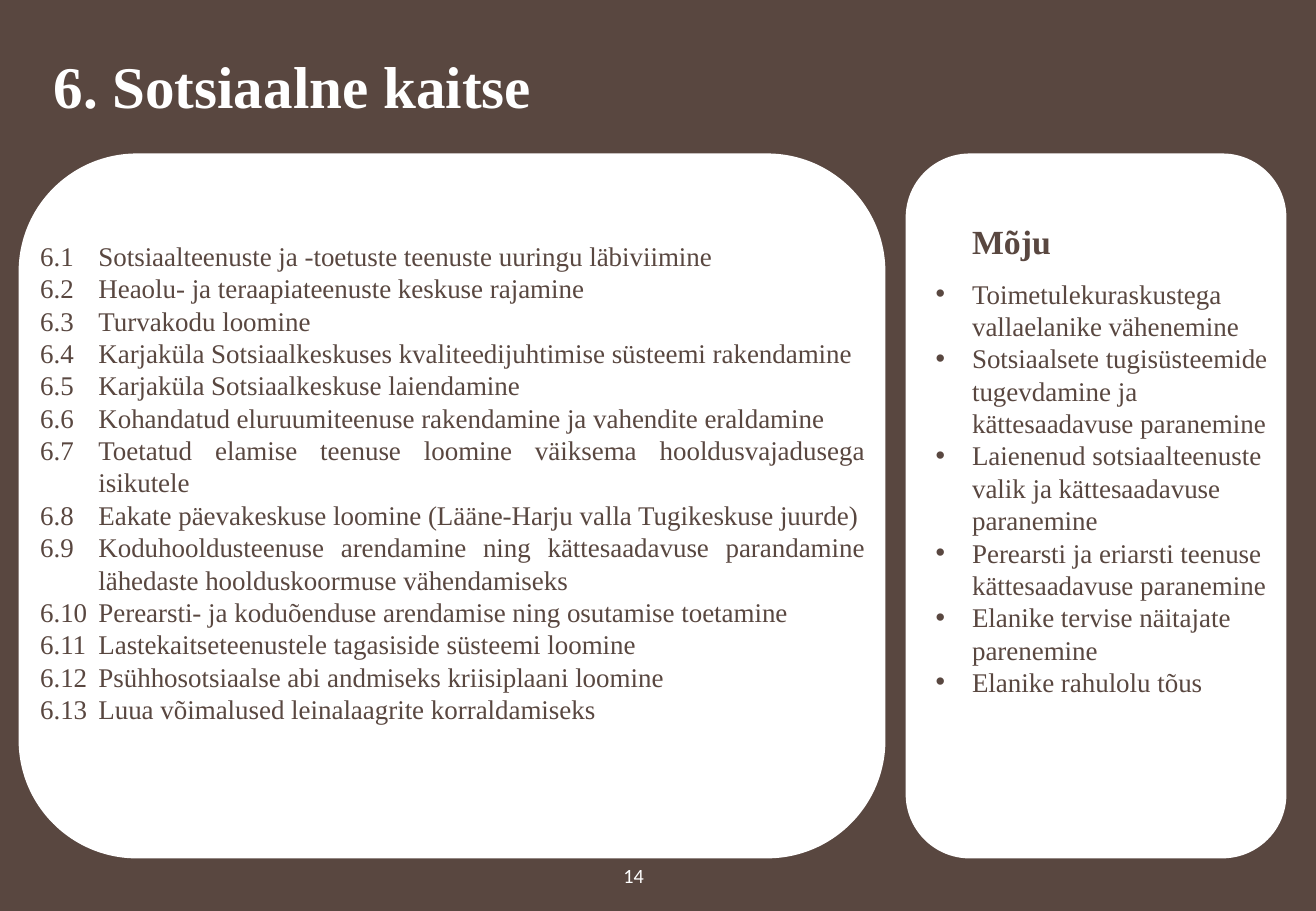
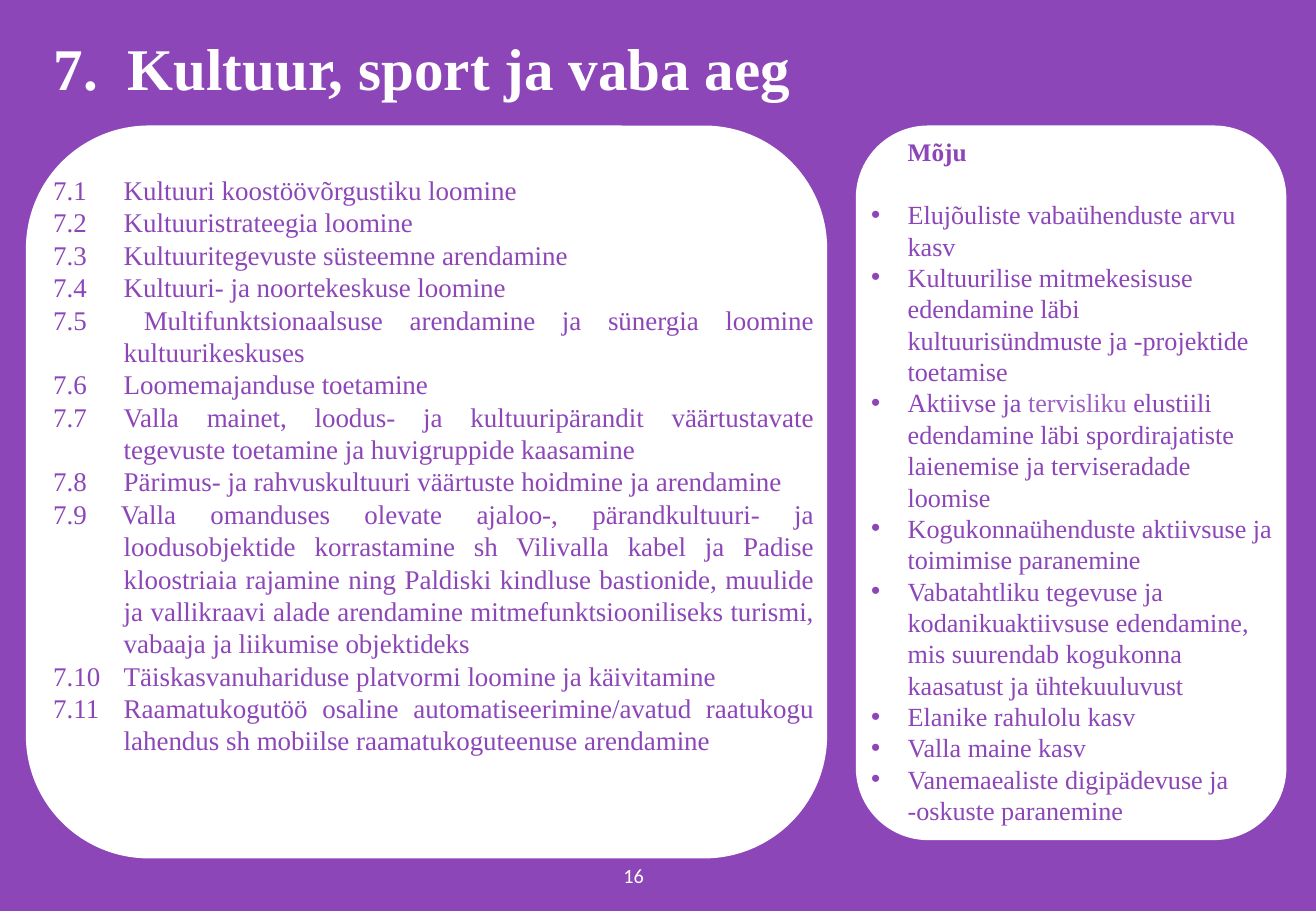
import pptx
import pptx.dml.color
import pptx.enum.shapes
import pptx.enum.text
import pptx.oxml.ns
import pptx.util
from lxml import etree

Inches = pptx.util.Inches
Pt = pptx.util.Pt
Align = pptx.enum.text.PP_ALIGN
Anchor = pptx.enum.text.MSO_ANCHOR

BROWN = pptx.dml.color.RGBColor(0x59, 0x47, 0x40)
PURPLE = pptx.dml.color.RGBColor(0x8D, 0x46, 0xB8)
LIGHT_PURPLE = pptx.dml.color.RGBColor(0x9E, 0x61, 0xC3)
WHITE = pptx.dml.color.RGBColor(0xFF, 0xFF, 0xFF)

SOCIAL_ACTIONS = [
    "6.1\tSotsiaalteenuste ja -toetuste teenuste uuringu läbiviimine",
    "6.2\tHeaolu- ja teraapiateenuste keskuse rajamine",
    "6.3\tTurvakodu loomine",
    "6.4\tKarjaküla Sotsiaalkeskuses kvaliteedijuhtimise süsteemi rakendamine",
    "6.5\tKarjaküla Sotsiaalkeskuse laiendamine",
    "6.6\tKohandatud eluruumiteenuse rakendamine ja vahendite eraldamine",
    "6.7\tToetatud elamise teenuse loomine väiksema hooldusvajadusega isikutele",
    "6.8\tEakate päevakeskuse loomine (Lääne-Harju valla Tugikeskuse juurde)",
    "6.9\tKoduhooldusteenuse arendamine ning kättesaadavuse parandamine "
    "lähedaste hoolduskoormuse vähendamiseks",
    "6.10\tPerearsti- ja koduõenduse arendamise ning osutamise toetamine",
    "6.11\tLastekaitseteenustele tagasiside süsteemi loomine",
    "6.12\tPsühhosotsiaalse abi andmiseks kriisiplaani loomine",
    "6.13\tLuua võimalused leinalaagrite korraldamiseks",
]
SOCIAL_IMPACT = [
    "Toimetulekuraskustega vallaelanike vähenemine",
    "Sotsiaalsete tugisüsteemide tugevdamine ja kättesaadavuse paranemine",
    "Laienenud sotsiaalteenuste valik ja kättesaadavuse paranemine",
    "Perearsti ja eriarsti teenuse kättesaadavuse paranemine",
    "Elanike tervise näitajate parenemine",
    "Elanike rahulolu tõus",
]
CULTURE_ACTIONS = [
    "7.1\tKultuuri koostöövõrgustiku loomine",
    "7.2\tKultuuristrateegia loomine",
    "7.3\tKultuuritegevuste süsteemne arendamine",
    "7.4\tKultuuri- ja noortekeskuse loomine",
    "7.5 \tMultifunktsionaalsuse arendamine ja sünergia loomine kultuurikeskuses",
    "7.6\tLoomemajanduse toetamine",
    "7.7\tValla mainet, loodus- ja kultuuripärandit väärtustavate tegevuste "
    "toetamine ja huvigruppide kaasamine",
    "7.8\tPärimus- ja rahvuskultuuri väärtuste hoidmine ja arendamine",
    "7.9 Valla omanduses olevate ajaloo-, pärandkultuuri- ja loodusobjektide "
    "korrastamine sh Vilivalla kabel ja Padise kloostriaia rajamine ning Paldiski "
    "kindluse bastionide, muulide ja vallikraavi alade arendamine "
    "mitmefunktsiooniliseks turismi, vabaaja ja liikumise objektideks",
    "7.10\tTäiskasvanuhariduse platvormi loomine ja käivitamine",
    "7.11\tRaamatukogutöö osaline automatiseerimine/avatud raatukogu lahendus sh "
    "mobiilse raamatukoguteenuse arendamine",
]
CULTURE_IMPACT = [
    "Elujõuliste vabaühenduste arvu kasv",
    "Kultuurilise mitmekesisuse edendamine läbi kultuurisündmuste ja "
    "-projektide toetamise",
    "Aktiivse ja tervisliku elustiili edendamine läbi spordirajatiste "
    "laienemise ja terviseradade loomise",
    "Kogukonnaühenduste aktiivsuse ja toimimise paranemine",
    "Vabatahtliku tegevuse ja kodanikuaktiivsuse edendamine, mis suurendab "
    "kogukonna kaasatust ja ühtekuuluvust",
    "Elanike rahulolu kasv",
    "Valla maine kasv",
    "Vanemaealiste digipädevuse ja -oskuste paranemine",
]


class Deck:
    font = "Times New Roman"

    def __init__(self):
        self.presentation = pptx.Presentation()
        self.presentation.slide_width = Inches(10.83)
        self.presentation.slide_height = Inches(7.5)

    def start_slide(self, color):
        self.color = color
        self.slide = self.presentation.slides.add_slide(self.presentation.slide_layouts[6])
        fill = self.slide.background.fill
        fill.solid()
        fill.fore_color.rgb = color

    def panel(self, *box):
        shape = self.slide.shapes.add_shape(
            pptx.enum.shapes.MSO_SHAPE.ROUNDED_RECTANGLE, *map(Inches, box))
        shape.adjustments[0] = 0.167
        shape.shadow.inherit = False
        shape.fill.solid()
        shape.fill.fore_color.rgb = WHITE
        shape.line.color.rgb = WHITE
        shape.line.width = Pt(1)

    def text_frame(self, box, anchor=Anchor.MIDDLE, side_inset=0.05):
        frame = self.slide.shapes.add_textbox(*map(Inches, box)).text_frame
        frame.word_wrap = True
        frame.vertical_anchor = anchor
        frame.margin_left = frame.margin_right = Inches(side_inset)
        frame.margin_top = frame.margin_bottom = Inches(0.05)
        return frame

    def paragraph(self, frame, text, size, color, bold=False, font=font,
                  left=0, hanging=0, accent=None):
        first = frame.paragraphs[0]
        paragraph = frame.add_paragraph() if first.runs else first
        parts = text.partition(accent) if accent else [text]
        for part in filter(None, parts):
            run = paragraph.add_run()
            run.text = part
            if part == accent:
                run.font.color.rgb = LIGHT_PURPLE
        paragraph.font.name = font
        paragraph.font.size = Pt(size)
        paragraph.font.bold = bold
        paragraph.font.color.rgb = color
        for run in paragraph.runs:
            run.font.name = font
            run.font.size = Pt(size)
            run.font.bold = bold
            if run.text != accent:
                run.font.color.rgb = color
        properties = paragraph._p.get_or_add_pPr()
        properties.set("marL", str(Inches(left)))
        properties.set("indent", str(-Inches(hanging)))
        return paragraph

    def title(self, text, top, hanging=0):
        frame = self.text_frame((0.39, top, 9.85, 0.6))
        paragraph = self.paragraph(frame, text, 35, WHITE, bold=True,
                                   left=hanging, hanging=hanging)
        paragraph.line_spacing = 0.9

    def page_number(self, number):
        frame = self.text_frame((5.07, 7.06, 0.29, 0.29))
        frame.word_wrap = False
        paragraph = self.paragraph(frame, str(number), 12, WHITE, font="Calibri")
        paragraph.alignment = Align.CENTER

    def actions(self, items, box, left, hanging, **frame_style):
        frame = self.text_frame(box, **frame_style)
        for item in items:
            paragraph = self.paragraph(frame, item, 16, self.color,
                                       left=left, hanging=hanging)
            paragraph.alignment = Align.JUSTIFY

    def impact(self, items, box, heading_size, size, gap, accent=None):
        frame = self.text_frame(box)
        heading = self.paragraph(frame, "Mõju", heading_size, self.color,
                                 bold=True, left=0.39)
        heading.space_after = Pt(gap)
        for item in items:
            paragraph = self.paragraph(frame, item, size, self.color, left=0.39,
                                       hanging=0.3, accent=accent)
            properties = paragraph._p.get_or_add_pPr()
            for tag, name, value in (("a:buFont", "typeface", "Arial"),
                                     ("a:buChar", "char", "•")):
                etree.SubElement(properties, pptx.oxml.ns.qn(tag)).set(name, value)


def main():
    deck = Deck()

    deck.start_slide(BROWN)
    deck.panel(0.16, 1.27, 7.12, 5.79)
    deck.actions(SOCIAL_ACTIONS, (0.28, 1.9, 6.89, 4.14), 0.48, 0.48)
    deck.panel(7.46, 1.27, 3.12, 5.79)
    deck.impact(SOCIAL_IMPACT, (7.56, 1.76, 2.93, 4.04), 20, 16, 9.6)
    deck.title("6. Sotsiaalne kaitse", 0.44)
    deck.page_number(14)

    deck.start_slide(PURPLE)
    deck.panel(0.22, 1.04, 6.58, 6.02)
    deck.panel(7.05, 1.04, 3.53, 5.87)
    deck.impact(CULTURE_IMPACT, (7.03, 1.04, 3.53, 5.84), 15, 15.5, 19,
                accent="tervisliku")
    deck.title("7.\tKultuur, sport ja vaba aeg", 0.29, hanging=0.61)
    deck.page_number(16)
    deck.actions(CULTURE_ACTIONS, (0.04, 1.38, 6.76, 4.95), 0.88, 0.58,
                 anchor=Anchor.TOP, side_inset=0.1)

    deck.presentation.save("out.pptx")


if __name__ == "__main__":
    main()
